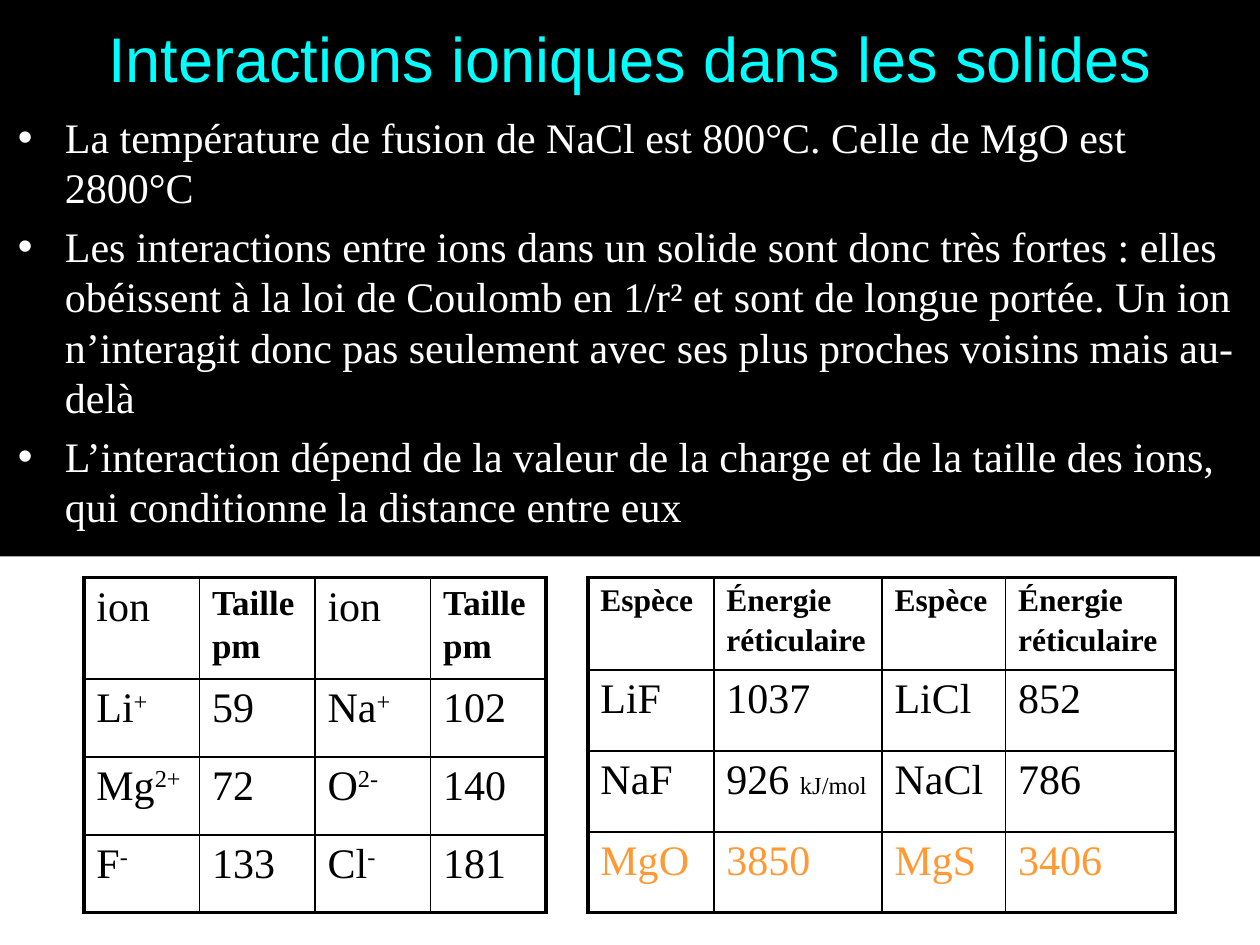
from dataclasses import dataclass, replace

from lxml.etree import SubElement
from pptx import Presentation
from pptx.dml.color import RGBColor
from pptx.enum.text import MSO_ANCHOR, PP_ALIGN
from pptx.oxml.ns import qn
from pptx.util import Cm, Pt


@dataclass(frozen=True)
class Theme:
    black: str = "000000"
    white: str = "FFFFFF"
    cyan: str = "00FFFF"
    orange: str = "FF9933"
    title_font: str = "Arial"
    body_font: str = "Times New Roman"
    title_size: int = 36
    body_size: int = 24
    ion_header_size: int = 20
    energy_header_size: int = 18
    unit_size: int = 14
    outer_border: float = 2.25
    inner_border: float = 1


THEME = Theme()


@dataclass(frozen=True)
class TextRun:
    text: str
    size: int = THEME.body_size
    colour: str = THEME.black
    font: str = THEME.body_font
    bold: bool = False
    superscript: bool = False


BULLETS = [
    "La température de fusion de NaCl est 800°C. Celle de MgO est 2800°C",
    "Les interactions entre ions dans un solide sont donc très fortes : elles "
    "obéissent à la loi de Coulomb en 1/r² et sont de longue portée. Un ion "
    "n’interagit donc pas seulement avec ses plus proches voisins mais au-delà",
    "L’interaction dépend de la valeur de la charge et de la taille des ions, "
    "qui conditionne la distance entre eux",
]


# Cell contents: a list of paragraphs, each a list of runs
def plain(text, colour=THEME.black):
    return [[TextRun(text, colour=colour)]]


def header(size, *lines):
    return [[TextRun(line, size, bold=True)] for line in lines]


def ion(symbol, charge):
    return [[TextRun(symbol), TextRun(charge, superscript=True)]]


def add_run(paragraph, content):
    run = paragraph.add_run()
    run.text = content.text
    run.font.name = content.font
    run.font.size = Pt(content.size)
    run.font.bold = content.bold
    run.font.color.rgb = RGBColor.from_string(content.colour)
    if content.superscript:
        run.font._element.set("baseline", "30000")


def fill_text(text_frame, paragraphs, spacing):
    """Write the paragraphs; spacing is a share of the type size."""
    for index, runs in enumerate(paragraphs):
        paragraph = text_frame.paragraphs[0] if index == 0 else text_frame.add_paragraph()
        paragraph.space_before = Pt(spacing * runs[0].size)
        for content in runs:
            add_run(paragraph, content)


def add_panel(slide, top, height, paragraphs, spacing=0):
    """Add a black text panel across the slide."""
    shape = slide.shapes.add_textbox(0, Cm(top), Cm(25.4), Cm(height))
    shape.fill.solid()
    shape.fill.fore_color.rgb = RGBColor.from_string(THEME.black)
    shape.text_frame.word_wrap = True
    fill_text(shape.text_frame, paragraphs, spacing)
    return shape.text_frame


def add_bullet(paragraph):
    properties = paragraph._p.get_or_add_pPr()
    properties.set("marL", str(Cm(1.06)))
    properties.set("indent", str(Cm(-0.95)))
    SubElement(properties, qn("a:buFont"), typeface=THEME.title_font)
    SubElement(properties, qn("a:buChar"), char="•")


def add_border(cell, side, width):
    line = SubElement(cell._tc.get_or_add_tcPr(), qn(f"a:ln{side}"), w=str(Pt(width)))
    solid = SubElement(line, qn("a:solidFill"))
    SubElement(solid, qn("a:srgbClr"), val=THEME.black)


def add_data_table(slide, left, top, widths, heights, rows):
    table = slide.shapes.add_table(
        len(rows), len(widths), Cm(left), Cm(top), Cm(sum(widths)), Cm(sum(heights))
    ).table
    table.first_row = table.horz_banding = False
    for column, width in zip(table.columns, widths):
        column.width = Cm(width)
    for row, height in zip(table.rows, heights):
        row.height = Cm(height)
    for r, row in enumerate(rows):
        for c, paragraphs in enumerate(row):
            cell = table.cell(r, c)
            fill_text(cell.text_frame, paragraphs, spacing=0.14)
            # Heavy frame around the table, thin lines inside
            on_frame = {"L": c == 0, "R": c == len(widths) - 1,
                        "T": r == 0, "B": r == len(rows) - 1}
            for side, outer in on_frame.items():
                add_border(cell, side, THEME.outer_border if outer else THEME.inner_border)
            cell.fill.background()


def main():
    presentation = Presentation()
    presentation.slide_width, presentation.slide_height = Cm(25.4), Cm(19.05)
    slide = presentation.slides.add_slide(presentation.slide_layouts[6])

    # Title
    title_run = TextRun("Interactions ioniques dans les solides", THEME.title_size,
                        THEME.cyan, THEME.title_font)
    title = add_panel(slide, 0, 2.33, [[title_run]])
    title.vertical_anchor = MSO_ANCHOR.MIDDLE
    title.paragraphs[0].alignment = PP_ALIGN.CENTER

    # Bulleted text
    white_run = TextRun("", colour=THEME.white)
    body = add_panel(slide, 2.12, 9.1,
                     [[replace(white_run, text=text)] for text in BULLETS], spacing=0.2)
    for paragraph in body.paragraphs:
        add_bullet(paragraph)

    # Ion sizes
    size_header = header(THEME.ion_header_size, "Taille", "pm")
    add_data_table(slide, 1.69, 11.64, [2.33] * 4, [1.98] + [1.57] * 3, [
        [plain("ion"), size_header] * 2,
        [ion("Li", "+"), plain("59"), ion("Na", "+"), plain("102")],
        [ion("Mg", "2+"), plain("72"), ion("O", "2-"), plain("140")],
        [ion("F", "-"), plain("133"), ion("Cl", "-"), plain("181")],
    ])

    # Lattice energies
    species_header = header(THEME.energy_header_size, "Espèce")
    energy_header = header(THEME.energy_header_size, "Énergie", "réticulaire")
    energy_with_unit = [[TextRun("926 "), TextRun("kJ/mol", THEME.unit_size)]]
    add_data_table(slide, 11.85, 11.64, [2.54, 3.39, 2.49, 3.43], [1.86] + [1.63] * 3, [
        [species_header, energy_header] * 2,
        [plain(text) for text in ("LiF", "1037", "LiCl", "852")],
        [plain("NaF"), energy_with_unit, plain("NaCl"), plain("786")],
        [plain(text, THEME.orange) for text in ("MgO", "3850", "MgS", "3406")],
    ])

    presentation.save("out.pptx")


if __name__ == "__main__":
    main()
